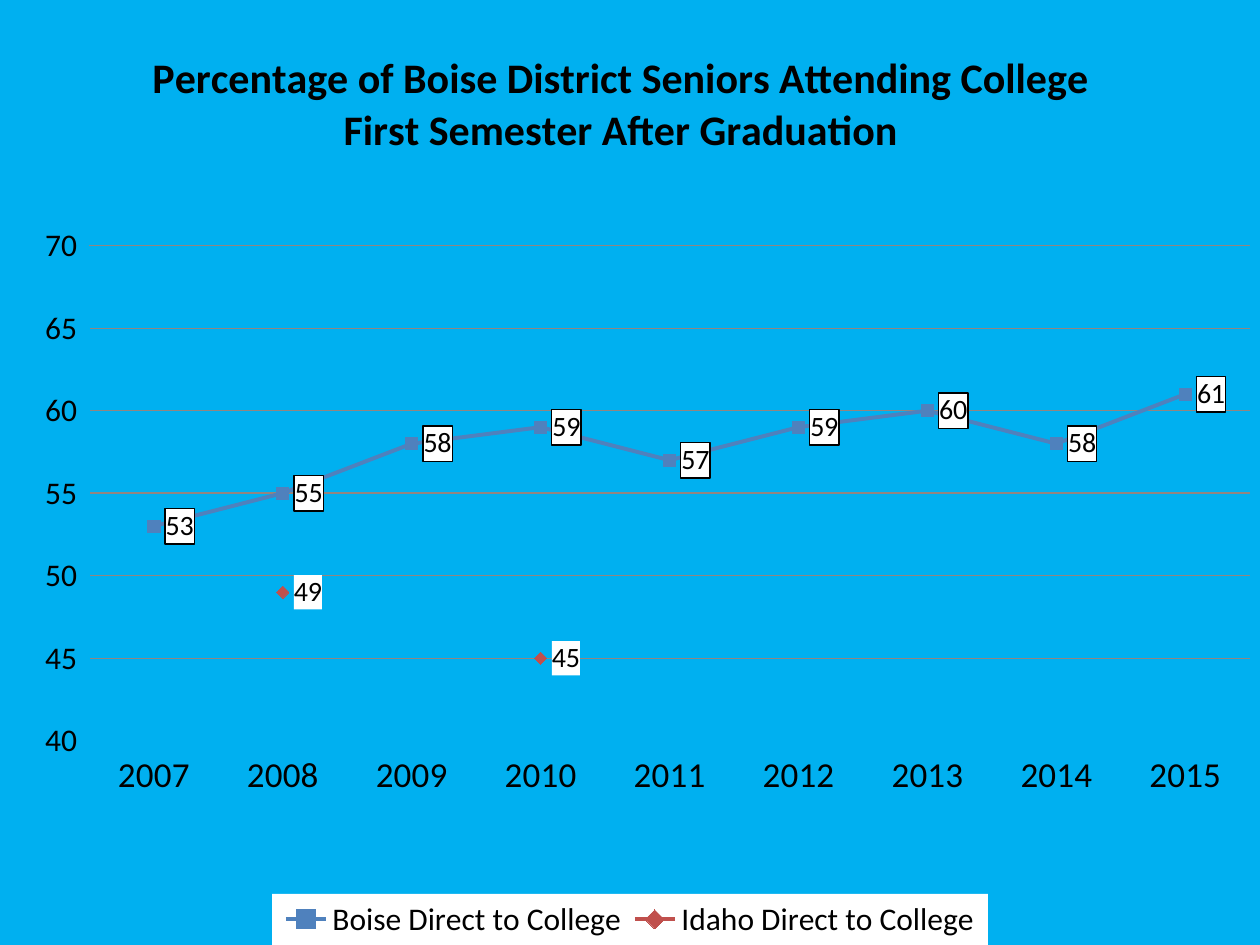
from lxml.etree import SubElement
from pptx import Presentation
from pptx.chart.data import CategoryChartData
from pptx.dml.color import RGBColor
from pptx.enum.chart import XL_CHART_TYPE as CT, XL_LABEL_POSITION as LP
from pptx.enum.chart import XL_LEGEND_POSITION as LG, XL_MARKER_STYLE as MS, XL_TICK_MARK as TM
from pptx.oxml import parse_xml
from pptx.oxml.ns import nsdecls, qn
from pptx.util import Pt

PX = 914400 // 126
W, H = 1260, 945
FONT = "Calibri"
COLORS = {"sky": "00B0F0", "ink": "000000", "white": "FFFFFF",
          "blue": "4F81BD", "red": "C0504D", "grid": "938580"}
TITLE = ["Percentage of Boise District Seniors Attending College",
         "First Semester After Graduation"]
YEARS = [str(y) for y in range(2007, 2016)]
SERIES = [
    ("Boise Direct to College", [53, 55, 58, 59, 57, 59, 60, 58, 61],
     "blue", MS.SQUARE, 7, "ink"),
    ("Idaho Direct to College", [None, 49, None, 45] + [None] * 5,
     "red", MS.DIAMOND, 7, None),
]
PLOT = (90, 246, 1160, 495)
LEGEND = (272, 894, 716, 51)
TITLE_AT = (149, 48)


def rgb(name):
    return RGBColor.from_string(COLORS[name])


def set_font(font, size, bold=False):
    font.name, font.size, font.bold = FONT, Pt(size), bold
    font.color.rgb = rgb("ink")


def add_box(parent, fill, line=None):
    def solid(name):
        return f'<a:solidFill><a:srgbClr val="{COLORS[name]}"/></a:solidFill>'
    edge = solid(line) if line else "<a:noFill/>"
    box = parse_xml(f'<c:spPr {nsdecls("c", "a")}>{solid(fill)}'
                    f'<a:ln w="9525">{edge}</a:ln></c:spPr>')
    parent.find(qn("c:txPr")).addprevious(box)


def set_layout(parent, index, place, inner=False):
    for old in parent.findall(qn("c:layout")):
        parent.remove(old)
    layout = parse_xml(f'<c:layout {nsdecls("c")}/>')
    manual = SubElement(layout, qn("c:manualLayout"))
    if inner:
        SubElement(manual, qn("c:layoutTarget")).set("val", "inner")
    for key in ("xMode", "yMode"):
        SubElement(manual, qn(f"c:{key}")).set("val", "edge")
    for key, value, full in zip("xywh", place, (W, H, W, H)):
        SubElement(manual, qn(f"c:{key}")).set("val", f"{value / full:.3f}")
    parent.insert(index, layout)


prs = Presentation()
prs.slide_width, prs.slide_height = W * PX, H * PX
slide = prs.slides.add_slide(prs.slide_layouts[6])

data = CategoryChartData(number_format="General")
data.categories = YEARS
for name, values, *_ in SERIES:
    data.add_series(name, values)
chart = slide.shapes.add_chart(CT.LINE_MARKERS, 0, 0, W * PX, H * PX, data).chart
set_font(chart.font, 10)
add_box(chart.element, "sky")
set_layout(chart.element.find(".//" + qn("c:plotArea")), 0, PLOT, inner=True)

tf = chart.chart_title.text_frame
for i, line in enumerate(TITLE):
    p = tf.add_paragraph() if i else tf.paragraphs[0]
    p.text = line
    set_font(p.font, 24, bold=True)
set_layout(chart.chart_title.element, 1, TITLE_AT)

chart.has_legend = True
legend = chart.legend
legend.position, legend.include_in_layout = LG.BOTTOM, False
set_font(legend.font, 18)
add_box(legend._element, "white")
set_layout(legend._element, 1, LEGEND)

for axis, size in ((chart.category_axis, 20), (chart.value_axis, 18)):
    set_font(axis.tick_labels.font, size)
    axis.major_tick_mark, axis.minor_tick_mark = TM.OUTSIDE, TM.NONE
    axis.format.line.color.rgb = rgb("sky")
axis = chart.value_axis
axis.minimum_scale, axis.maximum_scale, axis.major_unit = 40, 70, 5
axis.has_major_gridlines = True
axis.major_gridlines.format.line.color.rgb = rgb("grid")
axis.major_gridlines.format.line.width = Pt(0.75)

plot = chart.plots[0]
plot.vary_by_categories = False
for s, (_, _, color, marker, size, edge) in zip(plot.series, SERIES):
    s.smooth = False
    s.format.line.color.rgb = rgb(color)
    s.format.line.width = Pt(2.25)
    s.marker.style, s.marker.size = marker, size
    s.marker.format.fill.solid()
    s.marker.format.fill.fore_color.rgb = rgb(color)
    s.marker.format.line.color.rgb = rgb(color)
    labels = s.data_labels
    labels.show_value, labels.position = True, LP.RIGHT
    set_font(labels.font, 16)
    add_box(labels._element, "white", edge)

prs.save("out.pptx")
